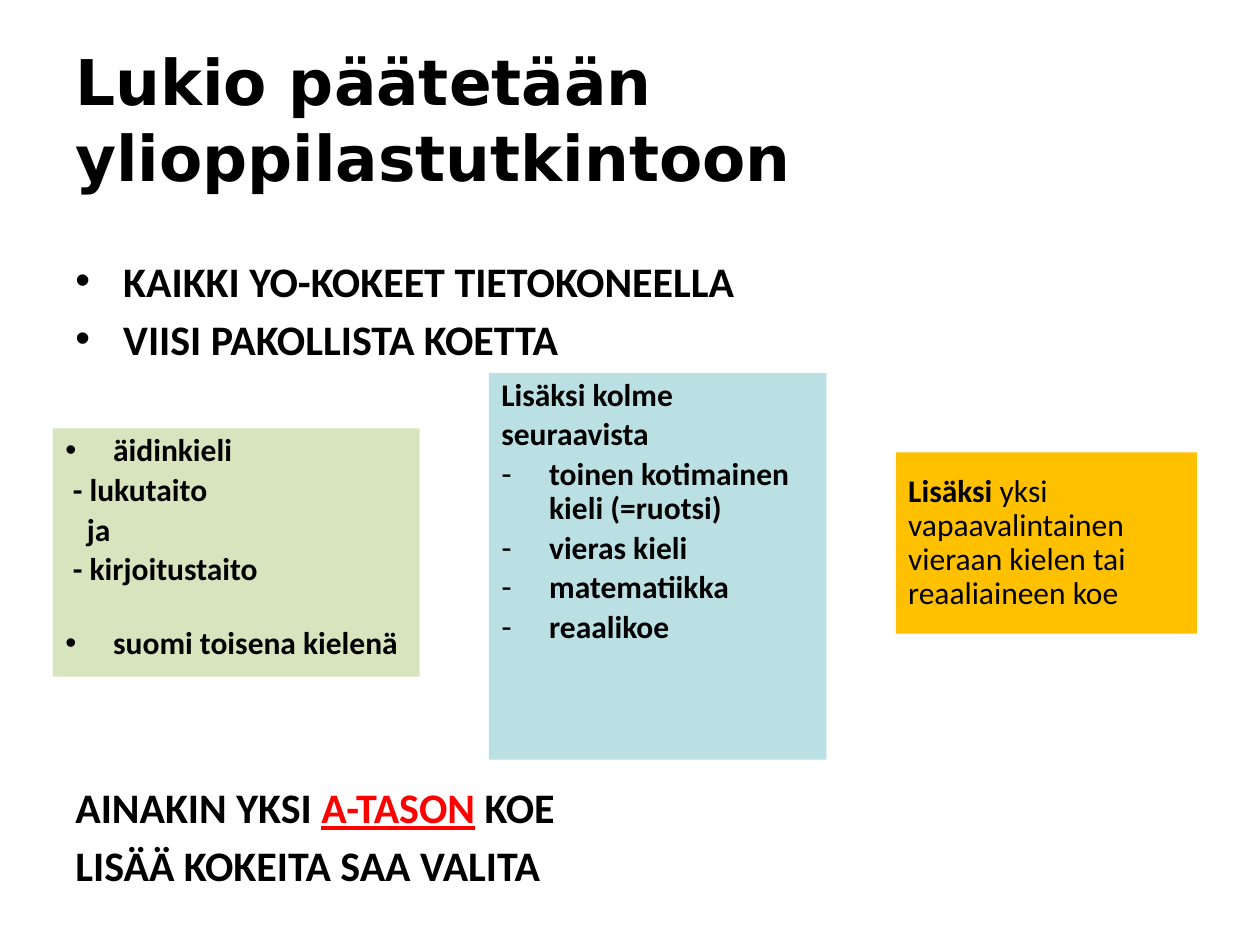
from dataclasses import dataclass

from lxml import etree
from pptx import Presentation
from pptx.dml.color import RGBColor
from pptx.enum.shapes import MSO_SHAPE
from pptx.enum.text import MSO_ANCHOR
from pptx.oxml.ns import qn
from pptx.util import Inches, Pt

RECT = MSO_SHAPE.RECTANGLE
TOP, MIDDLE = MSO_ANCHOR.TOP, MSO_ANCHOR.MIDDLE


@dataclass(frozen=True)
class Theme:
    ink: str = "000000"
    red: str = "FF0000"
    green: str = "D7E4BD"
    blue: str = "BBE0E3"
    amber: str = "FFC000"
    head: str = "DejaVu Sans"
    body: str = "Calibri"
    big: int = 36
    mid: int = 24
    small: int = 18
    hang: float = 0.38


T = Theme()

# Content: a paragraph is (runs, options); a run is (text, style)
TITLE = {"font": T.head, "size": T.big}
ALERT = {"color": T.red, "line": True}
MAIN = [
    ([("Lukio päätetään ylioppilastutkintoon", TITLE)], {}),
    ([("KAIKKI YO-KOKEET TIETOKONEELLA", {})], {"mark": "•", "gap": 35}),
    ([("VIISI PAKOLLISTA KOETTA", {})], {"mark": "•"}),
    ([("AINAKIN YKSI ", {}), ("A-TASON", ALERT), (" KOE", {})], {"gap": 239}),
    ([("LISÄÄ KOKEITA SAA VALITA", {})], {}),
]
NATIVE = [
    ([("äidinkieli", {})], {"mark": "•"}),
    ([("- lukutaito", {})], {"left": 0.06}),
    ([("ja", {})], {"left": 0.17}),
    ([("- kirjoitustaito", {})], {"left": 0.06}),
    ([("suomi toisena kielenä", {})], {"mark": "•", "gap": 23}),
]
EXAMS = ["toinen kotimainen kieli (=ruotsi)", "vieras kieli",
         "matematiikka", "reaalikoe"]
THREE = [([(line, {})], {}) for line in ("Lisäksi kolme", "seuraavista")]
THREE += [([(exam, {})], {"mark": "-"}) for exam in EXAMS]
EXTRA = [([
    ("Lisäksi ", {}),
    ("yksi vapaavalintainen vieraan kielen tai reaaliaineen koe",
     {"bold": False}),
], {})]

# Cards: place, fill, anchor, paragraphs
CARDS = [
    ((0.42, 3.4, 2.91, 1.97), T.green, TOP, NATIVE),
    ((3.88, 2.96, 2.68, 3.07), T.blue, TOP, THREE),
    ((7.11, 3.59, 2.39, 1.44), T.amber, MIDDLE, EXTRA),
]


def indent(para, left, mark):
    props = para._p.get_or_add_pPr()
    if mark:
        props.set("marL", str(Inches(T.hang)))
        props.set("indent", str(-Inches(T.hang)))
        etree.SubElement(props, qn("a:buFont")).set("typeface", "Arial")
        etree.SubElement(props, qn("a:buChar")).set("char", mark)
    else:
        props.set("marL", str(Inches(left)))
        props.set("indent", "0")


def write(frame, paras, size, anchor=TOP, pitch=1.0):
    frame.word_wrap = True
    frame.vertical_anchor = anchor
    for i, (runs, opts) in enumerate(paras):
        para = frame.paragraphs[0] if i == 0 else frame.add_paragraph()
        indent(para, opts.get("left", 0), opts.get("mark"))
        para.line_spacing = pitch
        if i:
            para.space_before = Pt(opts.get("gap", round(size * 0.18, 1)))
        for text, style in runs:
            run = para.add_run()
            run.text = text
            font = run.font
            font.name = style.get("font", T.body)
            font.size = Pt(style.get("size", size))
            font.bold = style.get("bold", True)
            font.underline = style.get("line", False)
            font.color.rgb = RGBColor.from_string(style.get("color", T.ink))


def main():
    deck = Presentation()
    deck.slide_width, deck.slide_height = Inches(10), Inches(7.5)
    shapes = deck.slides.add_slide(deck.slide_layouts[6]).shapes

    # Title, main points and closing lines
    box = shapes.add_textbox(*map(Inches, (0.5, 0.29, 9, 7.09)))
    write(box.text_frame, MAIN, T.mid)

    # Exam cards
    for place, fill, anchor, paras in CARDS:
        card = shapes.add_shape(RECT, *map(Inches, place))
        card.shadow.inherit = False
        card.fill.solid()
        card.fill.fore_color.rgb = RGBColor.from_string(fill)
        card.line.fill.background()
        write(card.text_frame, paras, T.small, anchor, 0.9)
        for para in card.text_frame.paragraphs:
            para.alignment = 1

    deck.save("out.pptx")


if __name__ == "__main__":
    main()
